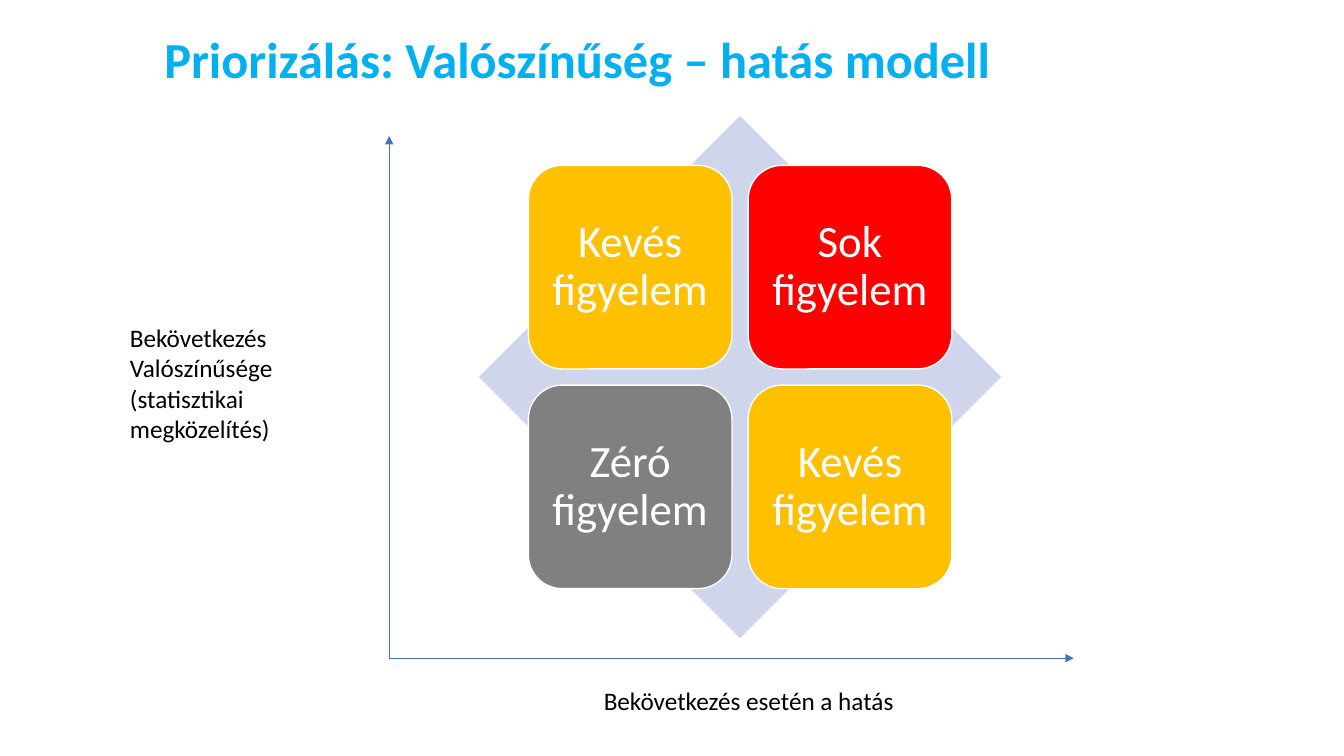
"""Build the probability and impact prioritisation slide."""
from lxml.etree import SubElement
from pptx import Presentation
from pptx.dml.color import RGBColor
from pptx.enum.shapes import MSO_CONNECTOR, MSO_SHAPE
from pptx.enum.text import MSO_ANCHOR, PP_ALIGN
from pptx.oxml.ns import qn
from pptx.util import Inches, Pt

CYAN = RGBColor(0x00, 0xB0, 0xF0)
BLUE = RGBColor(0x44, 0x72, 0xC4)
PALE_BLUE = RGBColor(0xCF, 0xD5, 0xEA)
AMBER = RGBColor(0xFF, 0xC0, 0x00)
RED = RGBColor(0xFF, 0x00, 0x00)
GRAY = RGBColor(0x80, 0x80, 0x80)
WHITE = RGBColor(0xFF, 0xFF, 0xFF)
BLACK = RGBColor(0x00, 0x00, 0x00)

TITLE = "Priorizálás: Valószínűség – hatás modell"
PROBABILITY_LABEL = "Bekövetkezés\nValószínűsége\n(statisztikai megközelítés)"
IMPACT_LABEL = "Bekövetkezés esetén a hatás"
QUADRANTS = [
    [("Kevés figyelem", AMBER), ("Sok figyelem", RED)],
    [("Zéró figyelem", GRAY), ("Kevés figyelem", AMBER)],
]
AXIS_ORIGIN = (3.86, 6.53)
AXIS_ENDS = [(3.86, 1.35), (10.65, 6.53)]
DIAMOND_LEFT, DIAMOND_TOP, DIAMOND_SIZE = 4.75, 1.15, 5.18
TILE_SIZE, TILE_STEP = 2.02, 2.18
TILE_MARGIN = (DIAMOND_SIZE - TILE_SIZE - TILE_STEP) / 2


def write(frame, text, size, color, bold=False):
    frame.word_wrap = True
    frame.text = text
    for para in frame.paragraphs:
        for span in para.runs:
            span.font.name = "Calibri"
            span.font.size = Pt(size)
            span.font.bold = bold
            span.font.color.rgb = color


def add_label(page, bounds, text, size=18, color=BLACK, bold=False):
    box = page.shapes.add_textbox(*map(Inches, bounds))
    write(box.text_frame, text, size, color, bold)
    return box.text_frame


def add_solid(page, kind, left, top, size, color):
    shape = page.shapes.add_shape(kind, *map(Inches, (left, top, size, size)))
    shape.shadow.inherit = False
    shape.fill.solid()
    shape.fill.fore_color.rgb = color
    shape.line.fill.background()
    return shape


def add_tile(page, left, top, text, color):
    tile = add_solid(page, MSO_SHAPE.ROUNDED_RECTANGLE, left, top, TILE_SIZE, color)
    tile.line.color.rgb = WHITE
    tile.line.width = Pt(1)
    frame = tile.text_frame
    write(frame, text, 32, WHITE)
    frame.vertical_anchor = MSO_ANCHOR.MIDDLE
    frame.margin_left = frame.margin_right = Inches(0.12)
    frame.margin_top = frame.margin_bottom = Inches(0.12)
    frame.paragraphs[0].alignment = PP_ALIGN.CENTER
    frame.paragraphs[0].line_spacing = 0.9


def add_axis(page, start, end):
    axis = page.shapes.add_connector(MSO_CONNECTOR.STRAIGHT, *map(Inches, start + end))
    axis.line.color.rgb = BLUE
    axis.line.width = Pt(0.5)
    SubElement(axis.line._get_or_add_ln(), qn("a:tailEnd"), type="triangle")
    SubElement(axis._element.spPr, qn("a:effectLst"))


def main():
    deck = Presentation()
    deck.slide_width, deck.slide_height = Inches(13.33), Inches(7.5)
    page = deck.slides.add_slide(deck.slide_layouts[6])

    title = add_label(page, (1.3, 0.42, 10, 0.52), TITLE, 36, CYAN, True)
    title.vertical_anchor = MSO_ANCHOR.BOTTOM
    title.margin_left = Inches(0.33)
    title.paragraphs[0].line_spacing = 0.9

    add_solid(page, MSO_SHAPE.DIAMOND, DIAMOND_LEFT, DIAMOND_TOP, DIAMOND_SIZE, PALE_BLUE)
    for row, tiles in enumerate(QUADRANTS):
        for column, (text, color) in enumerate(tiles):
            left = DIAMOND_LEFT + TILE_MARGIN + column * TILE_STEP
            top = DIAMOND_TOP + TILE_MARGIN + row * TILE_STEP
            add_tile(page, left, top, text, color)

    for end in AXIS_ENDS:
        add_axis(page, AXIS_ORIGIN, end)
    add_label(page, (1.19, 3.15, 2.19, 1.31), PROBABILITY_LABEL)
    add_label(page, (5.89, 6.75, 3.26, 0.4), IMPACT_LABEL)
    deck.save("out.pptx")


if __name__ == "__main__":
    main()
